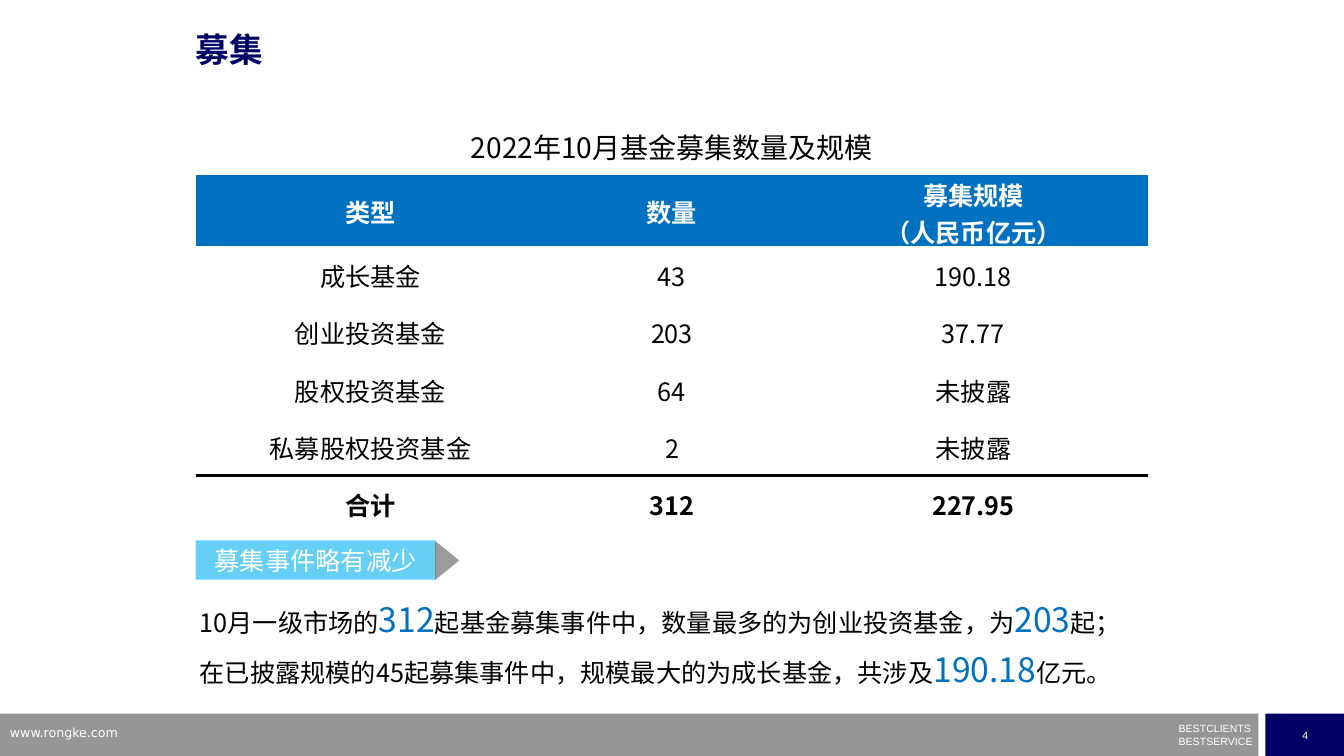
from lxml import etree
from pptx import Presentation
from pptx import util as u
from pptx.dml.color import RGBColor
from pptx.enum import shapes, text
from pptx.oxml import ns

CJK = "Noto Sans CJK SC"
CENTER = text.PP_ALIGN.CENTER
MIDDLE = text.MSO_ANCHOR.MIDDLE


def write(para, words, size, color, font=CJK, bold=False):
    span = para.add_run()
    span.text = words
    for name, value in {"size": u.Pt(size), "name": font, "bold": bold}.items():
        setattr(span.font, name, value)
    span.font.color.rgb = RGBColor.from_string(color)
    east = etree.SubElement(span.font._element, ns.qn("a:ea"))
    east.set("typeface", font)


def add_block(kind, left, top, width, height, color, opacity=100):
    block = page.shapes.add_shape(
        kind, u.Inches(left), u.Inches(top), u.Inches(width), u.Inches(height))
    block.shadow.inherit = False
    block.line.fill.background()
    block.fill.solid()
    block.fill.fore_color.rgb = RGBColor.from_string(color)
    if opacity < 100:
        tint = block._element.spPr.find(".//" + ns.qn("a:srgbClr"))
        etree.SubElement(tint, ns.qn("a:alpha")).set("val", str(opacity * 1000))
    return block


deck = Presentation()
deck.slide_width = u.Inches(13.33)
deck.slide_height = u.Inches(7.5)
page = deck.slides.add_slide(deck.slide_layouts[1])
rect = shapes.MSO_SHAPE.RECTANGLE

title, body = page.placeholders
for box, (left, top, width, height), margin, anchor in [
    (title, (1.94, 0.3, 9, 0.39), 0, text.MSO_ANCHOR.BOTTOM),
    (body, (1.38, 5.8, 11.48, 1.67), None, text.MSO_ANCHOR.TOP),
]:
    place = {"left": left, "top": top, "width": width, "height": height}
    for name, value in place.items():
        setattr(box, name, u.Inches(value))
    frame = box.text_frame
    frame.auto_size = text.MSO_AUTO_SIZE.NONE
    frame.word_wrap = True
    frame.vertical_anchor = anchor
    if margin is not None:
        for side in ("left", "top", "right", "bottom"):
            setattr(frame, "margin_" + side, margin)

heading = title.text_frame.paragraphs[0]
heading.alignment = text.PP_ALIGN.LEFT
heading.line_spacing = 0.9
write(heading, "募集", 24, "000066", bold=True)

findings = [
    ["10月一级市场的", "312", "起基金募集事件中，数量最多的为创业投资基金，为", "203", "起；"],
    ["在已披露规模的45起募集事件中，规模最大的为成长基金，共涉及", "190.18", "亿元。"],
]
for index, finding in enumerate(findings):
    frame = body.text_frame
    para = frame.add_paragraph() if index else frame.paragraphs[0]
    para.alignment = text.PP_ALIGN.JUSTIFY
    para.line_spacing = 1.23
    para.space_before = u.Pt(0)
    props = para._p.get_or_add_pPr()
    props.set("marL", "0")
    props.set("indent", str(u.Inches(0.5)))
    etree.SubElement(props, ns.qn("a:buNone"))
    for part, words in enumerate(finding):
        size, color = (24, "0070C0") if part % 2 else (18, "000000")
        write(para, words, size, color)

add_block(rect, 0, 7.08, 12.48, 0.42, "969696")
number = add_block(rect, 12.55, 7.08, 0.79, 0.42, "000066")
label = add_block(rect, 1.94, 5.36, 2.38, 0.39, "00B0F0", 60)
arrow = add_block(shapes.MSO_SHAPE.ISOSCELES_TRIANGLE, 4.24, 5.44, 0.39, 0.24, "595959", 60)
arrow.rotation = 90
for block, words, size, font in [
    (number, "4", 7.5, "Arial"),
    (label, "募集事件略有减少", 18, CJK),
]:
    block.text_frame.vertical_anchor = MIDDLE
    para = block.text_frame.paragraphs[0]
    para.alignment = CENTER
    write(para, words, size, "FFFFFF", font)

slogan = page.shapes.add_textbox(u.Inches(11.69), u.Inches(7.22), u.Inches(0.76), u.Inches(0.2))
frame = slogan.text_frame
frame.word_wrap = True
for side in ("left", "top", "right", "bottom"):
    setattr(frame, "margin_" + side, 0)
for index, words in enumerate(["BESTCLIENTS", "BESTSERVICE"]):
    para = frame.add_paragraph() if index else frame.paragraphs[0]
    para.line_spacing = 0.5
    para.space_before = u.Pt(4.3 * index)
    write(para, words, 7.5, "FFFFFF", "Arial")

website = page.shapes.add_textbox(0, u.Inches(7.14), u.Inches(3.2), u.Inches(0.26))
website.text_frame.word_wrap = True
write(website.text_frame.paragraphs[0], "www.rongke.com", 9, "FFFFFF", "DejaVu Sans")

rows = [
    ["2022年10月基金募集数量及规模", "", ""],
    ["类型", "数量", "募集规模\v（人民币亿元）"],
    ["成长基金", "43", "190.18"],
    ["创业投资基金", "203", "37.77"],
    ["股权投资基金", "64", "未披露"],
    ["私募股权投资基金", "2", "未披露"],
    ["合计", "312", "227.95"],
]
holder = page.shapes.add_table(
    len(rows), 3, u.Inches(1.94), u.Inches(1.16), u.Inches(9.45), u.Inches(4.13))
table = holder.table
table.first_row = False
table.horz_banding = False
style = table._tbl.tblPr.find(ns.qn("a:tableStyleId"))
style.text = "{2D5ABB26-0587-4C30-8999-92F81FD0307C}"
for column, width in zip(table.columns, [3.47, 2.51, 3.47]):
    column.width = u.Inches(width)
for row, height in zip(table.rows, [0.58, 0.7] + [0.57] * 5):
    row.height = u.Inches(height)
table.cell(0, 0).merge(table.cell(0, 2))

total = len(rows) - 1
borders = {total - 1: "a:lnB", total: "a:lnT"}
for r, row in enumerate(rows):
    for c, words in enumerate(row):
        cell = table.cell(r, c)
        cell.vertical_anchor = MIDDLE
        for side, margin in {"left": 0.01, "top": 0.01, "right": 0.01, "bottom": 0}.items():
            setattr(cell, "margin_" + side, u.Inches(margin))
        if r in borders:
            props = cell._tc.get_or_add_tcPr()
            edge = etree.SubElement(props, ns.qn(borders[r]), w=str(u.Pt(2.25)))
            ink = etree.SubElement(edge, ns.qn("a:solidFill"))
            etree.SubElement(ink, ns.qn("a:srgbClr"), val="000000")
        if r == 1:
            cell.fill.solid()
            cell.fill.fore_color.rgb = RGBColor.from_string("0070C0")
        else:
            cell.fill.background()
        para = cell.text_frame.paragraphs[0]
        para.alignment = CENTER
        for index, line in enumerate(words.split("\v")):
            if index:
                para.add_line_break()
            if line:
                write(para, line, 18 if r else 20, "FFFFFF" if r == 1 else "000000",
                      bold=r in (1, total))

deck.save("out.pptx")
